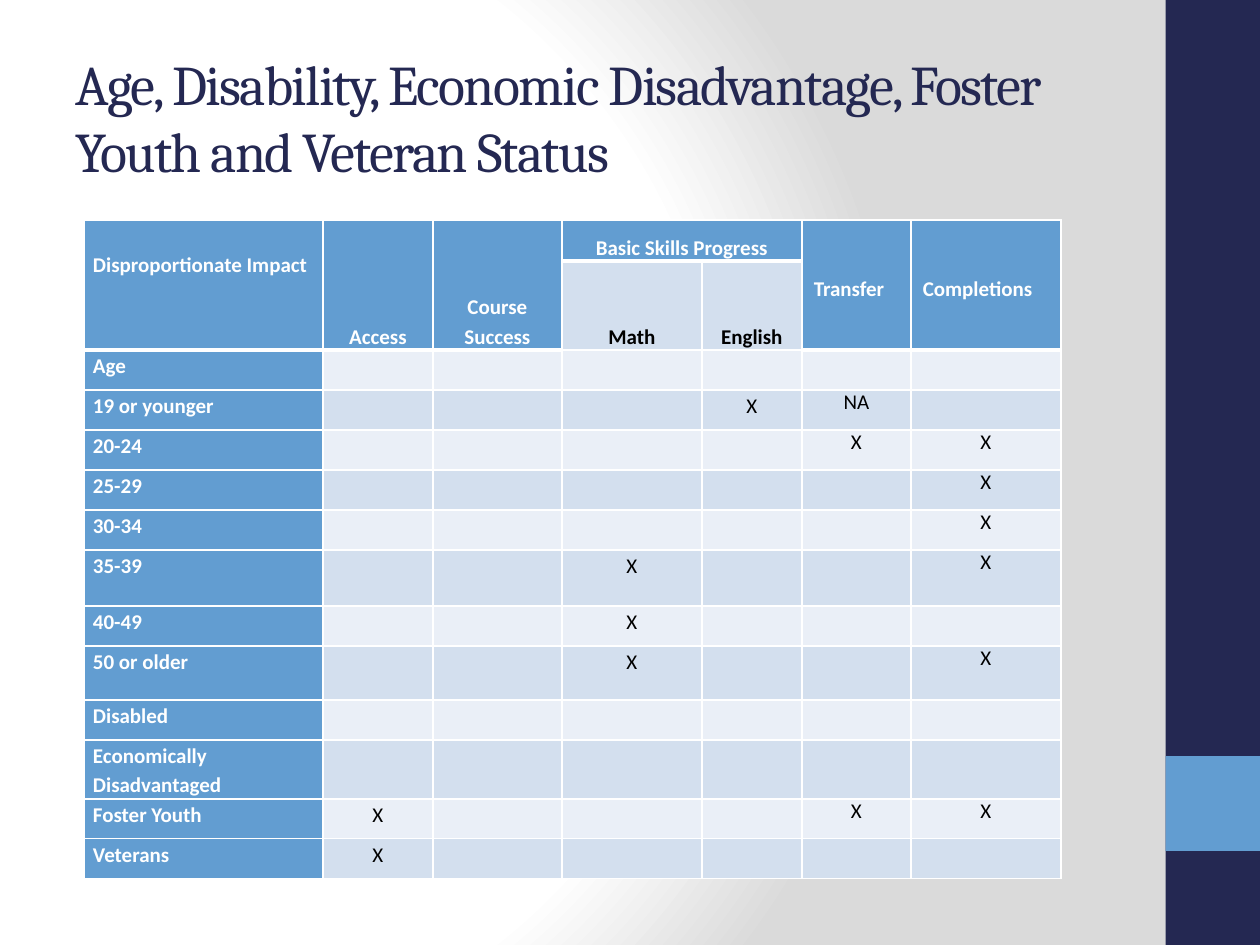
import pptx
import pptx.dml.color
import pptx.enum.shapes
import pptx.enum.text
import pptx.oxml
import pptx.oxml.ns
import pptx.util

ALIGN = pptx.enum.text.PP_ALIGN
ANCHOR = pptx.enum.text.MSO_ANCHOR
NS = pptx.oxml.ns.nsdecls("a")

# Content
TITLE = "Age, Disability, Economic Disadvantage, Foster Youth and Veteran Status"
NAVY, BLUE, WHITE, BLACK = "242852", "629DD1", "FFFFFF", "000000"
BANDS = ("EAEFF7", "D3DFEE")
BARS = [(0, 945, NAVY), (756, 95, BLUE)]  # top, height, colour

# text, row, column, rows spanned, columns spanned
HEADERS = [
    ("Disproportionate Impact", 0, 0, 2, 1),
    ("Access", 0, 1, 2, 1),
    ("Course Success", 0, 2, 2, 1),
    ("Basic Skills Progress", 0, 3, 1, 2),
    ("Transfer", 0, 5, 2, 1),
    ("Completions", 0, 6, 2, 1),
    ("Math", 1, 3, 1, 1),
    ("English", 1, 4, 1, 1),
]
# group, marks by column, row height
GROUPS = [
    ("Age", {}, 40),
    ("19 or younger", {4: "X", 5: "NA"}, 40),
    ("20-24", {5: "X", 6: "X"}, 40),
    ("25-29", {6: "X"}, 40),
    ("30-34", {6: "X"}, 40),
    ("35-39", {3: "X", 6: "X"}, 56),
    ("40-49", {3: "X"}, 40),
    ("50 or older", {3: "X", 6: "X"}, 54),
    ("Disabled", {}, 40),
    ("Economically Disadvantaged", {}, 59),
    ("Foster Youth", {1: "X", 5: "X", 6: "X"}, 40),
    ("Veterans", {1: "X"}, 40),
]
COLUMN_WIDTHS = [239, 110, 129, 140, 100, 109, 150]
ROW_HEIGHTS = [41, 89] + [height for _, _, height in GROUPS]


def px(length):
    return round(length * 914400 / 126)


def color(value):
    return pptx.dml.color.RGBColor.from_string(value)


def paint_background(slide):
    fill = slide.background.fill
    fill.gradient()
    properties = slide.background._cSld.bg.bgPr
    stops = "".join(
        f'<a:gs pos="{position * 1000}"><a:srgbClr val="{shade}"/></a:gs>'
        for position, shade in [(0, WHITE), (75, WHITE), (100, "DADADA")])
    gradient = pptx.oxml.parse_xml(
        f'<a:gradFill {NS} rotWithShape="1"><a:gsLst>{stops}</a:gsLst>'
        '<a:path path="circle"><a:fillToRect l="20000" t="50000" r="100000" b="50000"/>'
        '</a:path></a:gradFill>')
    properties.replace(properties.find(pptx.oxml.ns.qn("a:gradFill")), gradient)


def style_cell(cell, fill, bottom=1):
    """Set borders, fill and the tight margins shared by all cells."""
    properties = cell._tc.get_or_add_tcPr()
    for side, points in (("L", 1), ("R", 1), ("T", 1), ("B", bottom)):
        properties.append(pptx.oxml.parse_xml(
            f'<a:ln{side} {NS} w="{points * 12700}"><a:solidFill>'
            f'<a:srgbClr val="{WHITE}"/></a:solidFill></a:ln{side}>'))
    cell.fill.solid()
    cell.fill.fore_color.rgb = color(fill)
    cell.margin_left = cell.margin_right = px(9)
    cell.margin_top = cell.margin_bottom = 0


def write(cell, text, ink, bold, align, spacing=1.15):
    paragraph = cell.text_frame.paragraphs[0]
    paragraph.text = text
    paragraph.alignment = align
    paragraph.line_spacing = spacing
    font = paragraph.runs[0].font
    font.name, font.size, font.bold = "Calibri", pptx.util.Pt(12), bold
    font.color.rgb = color(ink)


prs = pptx.Presentation()
prs.slide_width, prs.slide_height = px(1260), px(945)
slide = prs.slides.add_slide(prs.slide_layouts[5])
paint_background(slide)

# Side bars
for top, height, shade in BARS:
    bar = slide.shapes.add_shape(pptx.enum.shapes.MSO_SHAPE.RECTANGLE,
                                 px(1165.5), px(top), px(94.5), px(height))
    bar.shadow.inherit = False
    bar.fill.solid()
    bar.fill.fore_color.rgb = color(shade)
    bar.line.fill.background()

# Title
title = slide.shapes.title
title.left, title.top, title.width, title.height = px(63), px(38), px(1050), px(157)
title.text_frame.text = TITLE
title.text_frame.word_wrap = True
title.text_frame.vertical_anchor = ANCHOR.MIDDLE
heading = title.text_frame.paragraphs[0]
heading.alignment = ALIGN.LEFT
heading_run = heading.runs[0]
heading_run.font.name, heading_run.font.size = "Cambria", pptx.util.Pt(32)
heading_run.font.color.rgb = color(NAVY)
heading_run._r.get_or_add_rPr().set("spc", "-100")

# Impact table
impact = slide.shapes.add_table(len(ROW_HEIGHTS), len(COLUMN_WIDTHS), px(84), px(220),
                                px(sum(COLUMN_WIDTHS)), px(sum(ROW_HEIGHTS))).table
impact.first_row = impact.horz_banding = False
for column, width in zip(impact.columns, COLUMN_WIDTHS):
    column.width = px(width)
for row, height in zip(impact.rows, ROW_HEIGHTS):
    row.height = px(height)

# Header rows
for row in range(2):
    for column in range(len(COLUMN_WIDTHS)):
        subheader = row == 1 and column in (3, 4)
        style_cell(impact.cell(row, column), BANDS[1] if subheader else BLUE,
                   1 if subheader else 3)
for text, row, column, rows, columns in HEADERS:
    cell = impact.cell(row, column)
    if rows * columns > 1:
        cell.merge(impact.cell(row + rows - 1, column + columns - 1))
    ink = BLACK if row else WHITE
    if column == 0:
        cell.margin_top = px(29)
        write(cell, text, ink, True, ALIGN.LEFT)
    elif column >= 5:
        cell.margin_left, cell.margin_top = px(12), px(57)
        write(cell, text, ink, True, ALIGN.LEFT, 1.0)
    else:
        cell.vertical_anchor = ANCHOR.BOTTOM
        write(cell, text, ink, True, ALIGN.CENTER)

# Group rows
for index, (group, marks, _) in enumerate(GROUPS):
    for column in range(len(COLUMN_WIDTHS)):
        cell = impact.cell(index + 2, column)
        style_cell(cell, BANDS[index % 2] if column else BLUE)
        if column == 0:
            write(cell, group, WHITE, True, ALIGN.LEFT)
        elif column in marks:
            write(cell, marks[column], BLACK, False, ALIGN.CENTER,
                  1.0 if column >= 5 else 1.15)

prs.save("out.pptx")
